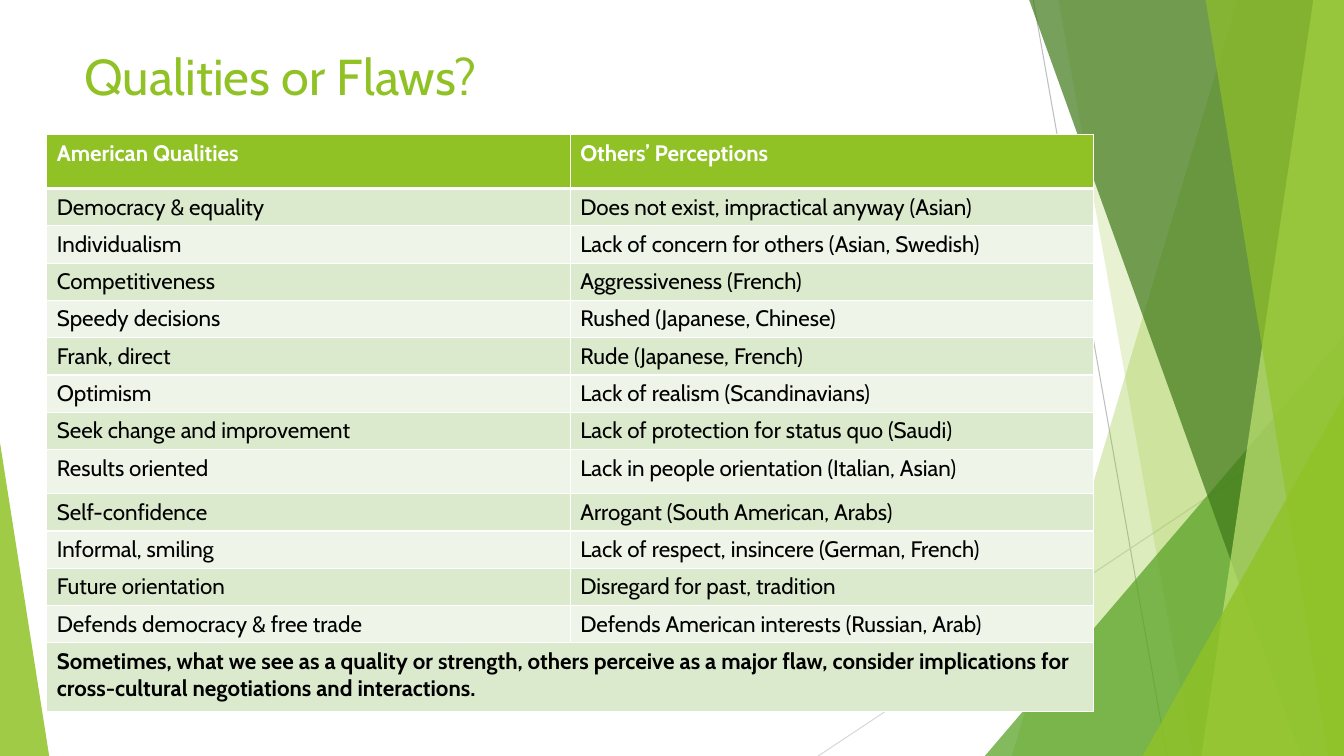
"""Build the slide "Qualities or Flaws?" with its green panels and comparison table."""
import pptx
import pptx.dml.color
import pptx.enum.shapes
import pptx.enum.text
import pptx.oxml
import pptx.oxml.ns
import pptx.util

Cm, Pt = pptx.util.Cm, pptx.util.Pt
RGB = pptx.dml.color.RGBColor.from_string
SHAPE = pptx.enum.shapes.MSO_SHAPE
NS = pptx.oxml.ns.nsdecls("a")
C = {"green": "90C226", "leaf": "54A021", "forest": "3F7819", "lime": "C0E474",
     "band": "DBE9CD", "pale": "EEF4E8", "white": "FFFFFF", "black": "000000",
     "gray": "BFBFBF", "silver": "D9D9D9"}
WIDTH, HEIGHT = 33.87, 19.05


def write(tf, text, size=16, color="black", bold=False):
    tf.word_wrap = True
    tf.vertical_anchor = pptx.enum.text.MSO_ANCHOR.TOP
    r = tf.paragraphs[0].add_run()
    r.text = text
    r.font.name, r.font.size, r.font.bold = "Cabin", Pt(size), bold
    r.font.color.rgb = RGB(C[color])


def style_cell(cell, fill, top=1, bottom=1):
    cell.fill.solid()
    cell.fill.fore_color.rgb = RGB(C[fill])
    sides = [("L", 1), ("R", 1), ("T", top), ("B", bottom)]
    for i, (side, width) in enumerate(sides):
        cell._tc.get_or_add_tcPr().insert(i, pptx.oxml.parse_xml(
            f'<a:ln{side} {NS} w="{Pt(width)}"><a:solidFill>'
            f'<a:srgbClr val="{C["white"]}"/></a:solidFill></a:ln{side}>'))


prs = pptx.Presentation()
prs.slide_width, prs.slide_height = Cm(WIDTH), Cm(HEIGHT)
s = prs.slides.add_slide(prs.slide_layouts[6])

for x1, y1, x2, y2, color in [(26.04, 0, 29.41, HEIGHT, "gray"),
                              (WIDTH, 10.24, 20.62, HEIGHT, "silver")]:
    line = s.shapes.add_connector(pptx.enum.shapes.MSO_CONNECTOR.STRAIGHT,
                                  Cm(x1), Cm(y1), Cm(x2), Cm(y2))
    line.line.color.rgb = RGB(C[color])
    line.line.width = Pt(0.75)
    line._element.spPr.append(pptx.oxml.parse_xml(f"<a:effectLst {NS}/>"))

panels = [
    ("wedge", (31.19, 25.5), "green", 30),
    ("wedge", (26.67, 30.05), "green", 20),
    ("triangle", (24.82, 8.46, 9.05, 1), "leaf", 72),
    ("wedge", (25.93, 32.79), "forest", 70),
    ("wedge", (33.1, 30.28), "lime", 70),
    ("wedge", (30.38, 33.48), "green", 65),
    ("triangle", (28.8, 9.98, 5.07, 1), "green", 80),
    ("triangle", (0, 11.15, 1.24, 0), "green", 85),
]
for kind, geometry, color, opacity in panels:
    if kind == "wedge":
        top_x, bottom_x = geometry
        outline = s.shapes.build_freeform(Cm(top_x), Cm(-0.02))
        outline.add_line_segments([(Cm(WIDTH), Cm(-0.02)), (Cm(WIDTH), Cm(HEIGHT)),
                                   (Cm(bottom_x), Cm(HEIGHT))], close=True)
        sp = outline.convert_to_shape()
    else:
        left, top, width, apex = geometry
        sp = s.shapes.add_shape(SHAPE.ISOSCELES_TRIANGLE, Cm(left), Cm(top),
                                Cm(width), Cm(HEIGHT - top))
        sp.adjustments[0] = apex
    sp.shadow.inherit = False
    sp.line.fill.background()
    sp.fill.solid()
    sp.fill.fore_color.rgb = RGB(C[color])
    srgb = sp._element.spPr.find(".//" + pptx.oxml.ns.qn("a:srgbClr"))
    srgb.append(pptx.oxml.parse_xml(f'<a:alpha {NS} val="{opacity * 1000}"/>'))

title = s.shapes.add_textbox(Cm(1.88), Cm(1), Cm(23.88), Cm(2.13))
write(title.text_frame, "Qualities or Flaws?", size=36, color="green")

rows = [
    ("American Qualities", "Others’ Perceptions"),
    ("Democracy & equality", "Does not exist, impractical anyway (Asian)"),
    ("Individualism", "Lack of concern for others (Asian, Swedish)"),
    ("Competitiveness", "Aggressiveness (French)"),
    ("Speedy decisions", "Rushed (Japanese, Chinese)"),
    ("Frank, direct", "Rude (Japanese, French)"),
    ("Optimism", "Lack of realism (Scandinavians)"),
    ("Seek change and improvement", "Lack of protection for status quo (Saudi)"),
    ("Results oriented", "Lack in people orientation (Italian, Asian)"),
    ("Self-confidence", "Arrogant (South American, Arabs)"),
    ("Informal, smiling", "Lack of respect, insincere (German, French)"),
    ("Future orientation", "Disregard for past, tradition"),
    ("Defends democracy & free trade", "Defends American interests (Russian, Arab)"),
    ("Sometimes, what we see as a quality or strength, others perceive as a major flaw, "
     "consider implications for cross-cultural negotiations and interactions.", ""),
]
last = len(rows) - 1
heights = {0: 1.36, 8: 1.11, last: 1.73}
row_heights = [heights.get(i, 0.94) for i in range(len(rows))]
table = s.shapes.add_table(len(rows), 2, Cm(1.18), Cm(3.39), Cm(26.38),
                           Cm(sum(row_heights))).table
for i, texts in enumerate(rows):
    table.rows[i].height = Cm(row_heights[i])
    fill = "green" if i == 0 else "band" if i % 2 else "pale"
    for j, text in enumerate(texts):
        cell = table.cell(i, j)
        style_cell(cell, fill, top=3 if i == 1 else 1, bottom=3 if i == 0 else 1)
        if text:
            write(cell.text_frame, text, color="black" if i else "white",
                  bold=i in (0, last))
            cell.vertical_anchor = pptx.enum.text.MSO_ANCHOR.TOP
table.cell(last, 0).merge(table.cell(last, 1))

prs.save("out.pptx")
